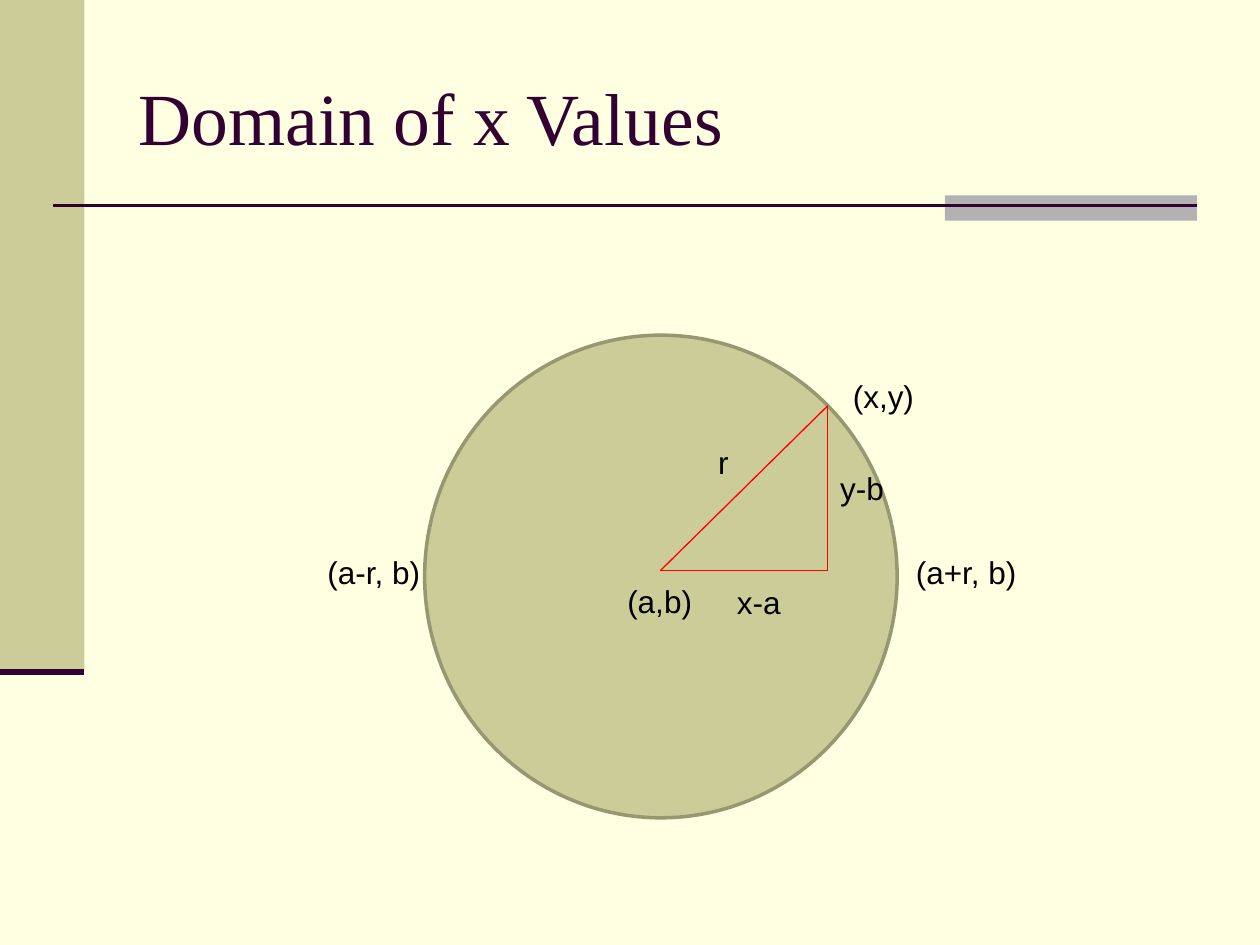
"""Builds a slide showing a circle centred at (a,b) and the range of its x values."""
import pptx
import pptx.dml.color
import pptx.enum.shapes
import pptx.enum.text
import pptx.oxml
import pptx.util
from pptx.oxml.ns import nsdecls

INK, OLIVE, RED = "330033", "CCCC99", "FF0000"
SHAPES = pptx.enum.shapes.MSO_SHAPE

deck = pptx.Presentation()
deck.slide_width = pptx.util.Inches(10)
deck.slide_height = pptx.util.Inches(7.5)


def color(hex_value):
    return pptx.dml.color.RGBColor.from_string(hex_value)


def place(*percents):
    """Turns alternating shares of slide width and height into lengths."""
    sides = (deck.slide_width, deck.slide_height) * 2
    return [int(side * percent / 100) for side, percent in zip(sides, percents)]


slide = deck.slides.add_slide(deck.slide_layouts[5])
slide.background.fill.solid()
slide.background.fill.fore_color.rgb = color("FFFFE1")

heading = slide.shapes.title
heading.left, heading.top, heading.width, heading.height = place(10, 4, 85, 16.67)
heading.text_frame.text = "Domain of x Values"
heading_format = {
    "word_wrap": True,
    "auto_size": pptx.enum.text.MSO_AUTO_SIZE.NONE,
    "vertical_anchor": pptx.enum.text.MSO_ANCHOR.MIDDLE,
}
for attribute, value in heading_format.items():
    setattr(heading.text_frame, attribute, value)
heading.text_frame.paragraphs[0].alignment = pptx.enum.text.PP_ALIGN.LEFT

for preset, box, fill, outline in [
    (SHAPES.RECTANGLE, (0, 0, 6.7, 71.07), OLIVE, None),
    (SHAPES.RECTANGLE, (75, 20.67, 20, 2.67), "B2B2B2", None),
    (SHAPES.OVAL, (33.7, 35.47, 37.5, 51.07), OLIVE, "979771"),
]:
    area = slide.shapes.add_shape(preset, *place(*box))
    area.shadow.inherit = False
    area.fill.solid()
    area.fill.fore_color.rgb = color(fill)
    if outline:
        area.line.color.rgb = color(outline)
        area.line.width = pptx.util.Pt(2)
    else:
        area.line.fill.background()

center, corner, rim = (52.4, 60.4), (65.7, 60.4), (65.7, 42.93)
for start, end, stroke, weight in [
    ((4.2, 21.73), (95, 21.73), INK, 1.5),
    ((0, 71.07), (6.7, 71.07), INK, 3.5),
    (rim, center, RED, 0.75),
    (corner, center, RED, 0.75),
    (rim, corner, RED, 0.75),
]:
    segment = slide.shapes.add_connector(
        pptx.enum.shapes.MSO_CONNECTOR.STRAIGHT, *place(*start, *end)
    )
    segment.line.color.rgb = color(stroke)
    segment.line.width = pptx.util.Pt(weight)
    segment._element.spPr.append(
        pptx.oxml.parse_xml(f"<a:effectLst {nsdecls('a')}/>")
    )

styled = [(heading, "Times New Roman", 42, INK)]
for wording, left, top, width in [
    ("(a,b)", 48.8, 60.93, 7.2),
    ("(x,y)", 66.7, 39.2, 6.9),
    ("r", 56, 46.27, 2.9),
    ("x-a", 57.5, 61.07, 5.5),
    ("y-b", 65.7, 48.93, 5.5),
    ("(a+r, b)", 71.7, 57.87, 10.1),
    ("(a-r, b)", 25, 57.87, 9.5),
]:
    label = slide.shapes.add_textbox(*place(left, top, width, 5.33))
    label.text_frame.text = wording
    label.text_frame.word_wrap = False
    label.text_frame.auto_size = pptx.enum.text.MSO_AUTO_SIZE.SHAPE_TO_FIT_TEXT
    styled.append((label, "Arial", 18, "000000"))

for holder, typeface, points, ink in styled:
    font = holder.text_frame.paragraphs[0].runs[0].font
    for attribute, value in {"name": typeface, "size": pptx.util.Pt(points)}.items():
        setattr(font, attribute, value)
    font.color.rgb = color(ink)

deck.save("out.pptx")
